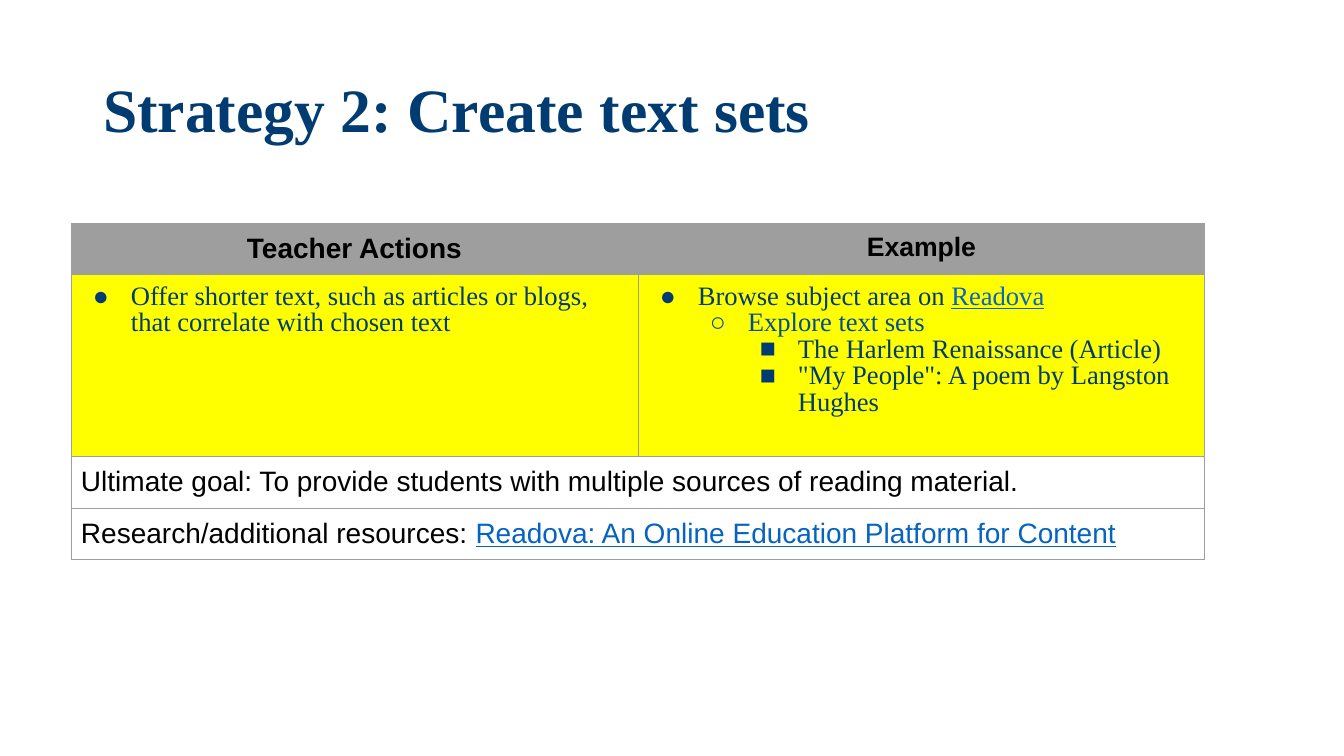
from lxml.etree import SubElement
from pptx import Presentation
from pptx.dml.color import RGBColor
from pptx.enum.text import MSO_ANCHOR, MSO_AUTO_SIZE, PP_ALIGN
from pptx.oxml.ns import qn
from pptx.util import Emu, Pt

NAVY = RGBColor(0x00, 0x3C, 0x71)
TITLE_NAVY = RGBColor(0x00, 0x3B, 0x71)
BLUE = RGBColor(0x00, 0x4E, 0x95)
LINK = RGBColor(0x05, 0x63, 0xC1)
GREY = RGBColor(0x9E, 0x9E, 0x9E)
YELLOW = RGBColor(0xFF, 0xFF, 0x00)
WHITE = RGBColor(0xFF, 0xFF, 0xFF)
BLACK = RGBColor(0x00, 0x00, 0x00)
SERIF, SANS = "Times New Roman", "Arial"

# Content
TITLE = "Strategy 2: Create text sets"
HEADERS = [("Teacher Actions", 20), ("Example", 19)]
# Per column: (level, colour, plain text, linked text)
BULLETS = [
    [(0, NAVY, "Offer shorter text, such as articles or blogs, "
               "that correlate with chosen text", "")],
    [(0, NAVY, "Browse subject area on ", "Readova"),
     (1, BLUE, "Explore text sets", ""),
     (2, NAVY, "The Harlem Renaissance (Article)", ""),
     (2, NAVY, '"My People": A poem by Langston Hughes', "")],
]
FOOTERS = [
    ("Ultimate goal: To provide students with multiple sources of reading material.", ""),
    ("Research/additional resources: ", "Readova: An Online Education Platform for Content"),
]
BULLET_MARKS = "●○■"

# Layout in px
SLIDE_SIZE = (1344, 756)
TITLE_BOX = (93, 40, 1159, 146)
TABLE_LEFT, TABLE_TOP = 71, 223
COLUMN_WIDTH = 567
ROW_HEIGHTS = [51, 182, 52, 51]
CELL_MARGIN = 10
INDENT, HANGING = 50, 38


def px(length):
    return Emu(round(length * 914400 / 100.8))


def style_cell(cell, fill):
    cell.margin_left = cell.margin_right = px(CELL_MARGIN)
    cell.margin_top = cell.margin_bottom = px(CELL_MARGIN)
    properties = cell._tc.get_or_add_tcPr()
    for side in ("lnL", "lnR", "lnT", "lnB"):
        line = SubElement(properties, qn(f"a:{side}"), w=str(Pt(0.75)))
        line_fill = SubElement(line, qn("a:solidFill"))
        SubElement(line_fill, qn("a:srgbClr"), val=str(GREY))
    cell.fill.solid()
    cell.fill.fore_color.rgb = fill


def set_font(paragraph, name, size, color, bold=False):
    font = paragraph.font
    font.name, font.size, font.bold = name, Pt(size), bold
    font.color.rgb = color


def add_runs(paragraph, plain, linked):
    paragraph.add_run().text = plain
    if linked:
        run = paragraph.add_run()
        run.text = linked
        run.font.underline = True
        run.font.color.rgb = LINK


def add_bullet(paragraph, level, color):
    paragraph.level = level
    paragraph.line_spacing = 0.9
    properties = paragraph._p.get_or_add_pPr()
    properties.set("marL", str(px(INDENT * (level + 1))))
    properties.set("indent", str(-px(HANGING)))
    bullet_color = SubElement(properties, qn("a:buClr"))
    SubElement(bullet_color, qn("a:srgbClr"), val=str(color))
    SubElement(properties, qn("a:buFont"), typeface=SANS)
    SubElement(properties, qn("a:buChar"), char=BULLET_MARKS[level])


presentation = Presentation()
presentation.slide_width, presentation.slide_height = map(px, SLIDE_SIZE)
slide = presentation.slides.add_slide(presentation.slide_layouts[5])

# Title
title = slide.shapes.title
title.left, title.top, title.width, title.height = map(px, TITLE_BOX)
title.text_frame.text = TITLE
title.text_frame.auto_size = MSO_AUTO_SIZE.NONE
title.text_frame.vertical_anchor = MSO_ANCHOR.MIDDLE
heading = title.text_frame.paragraphs[0]
heading.alignment = PP_ALIGN.LEFT
heading.line_spacing = 0.9
set_font(heading, SERIF, 44, TITLE_NAVY, bold=True)

# Table frame
columns = len(HEADERS)
table = slide.shapes.add_table(
    len(ROW_HEIGHTS), columns, px(TABLE_LEFT), px(TABLE_TOP),
    px(COLUMN_WIDTH * columns), px(sum(ROW_HEIGHTS))).table
table.first_row = table.horz_banding = False
for column in table.columns:
    column.width = px(COLUMN_WIDTH)
for row, height, fill in zip(table.rows, ROW_HEIGHTS, [GREY, YELLOW, WHITE, WHITE]):
    row.height = px(height)
    for cell in row.cells:
        style_cell(cell, fill)

# Header row
for index, (text, size) in enumerate(HEADERS):
    paragraph = table.cell(0, index).text_frame.paragraphs[0]
    paragraph.alignment = PP_ALIGN.CENTER
    add_runs(paragraph, text, "")
    set_font(paragraph, SANS, size, BLACK, bold=True)

# Bulleted row
for index, bullets in enumerate(BULLETS):
    frame = table.cell(1, index).text_frame
    for number, (level, color, plain, linked) in enumerate(bullets):
        paragraph = frame.add_paragraph() if number else frame.paragraphs[0]
        add_bullet(paragraph, level, color)
        add_runs(paragraph, plain, linked)
        set_font(paragraph, SERIF, 19, color)

# Full-width rows
for row_index, (plain, linked) in enumerate(FOOTERS, start=2):
    cell = table.cell(row_index, 0)
    cell.merge(table.cell(row_index, columns - 1))
    paragraph = cell.text_frame.paragraphs[0]
    add_runs(paragraph, plain, linked)
    set_font(paragraph, SANS, 20, BLACK)

presentation.save("out.pptx")
